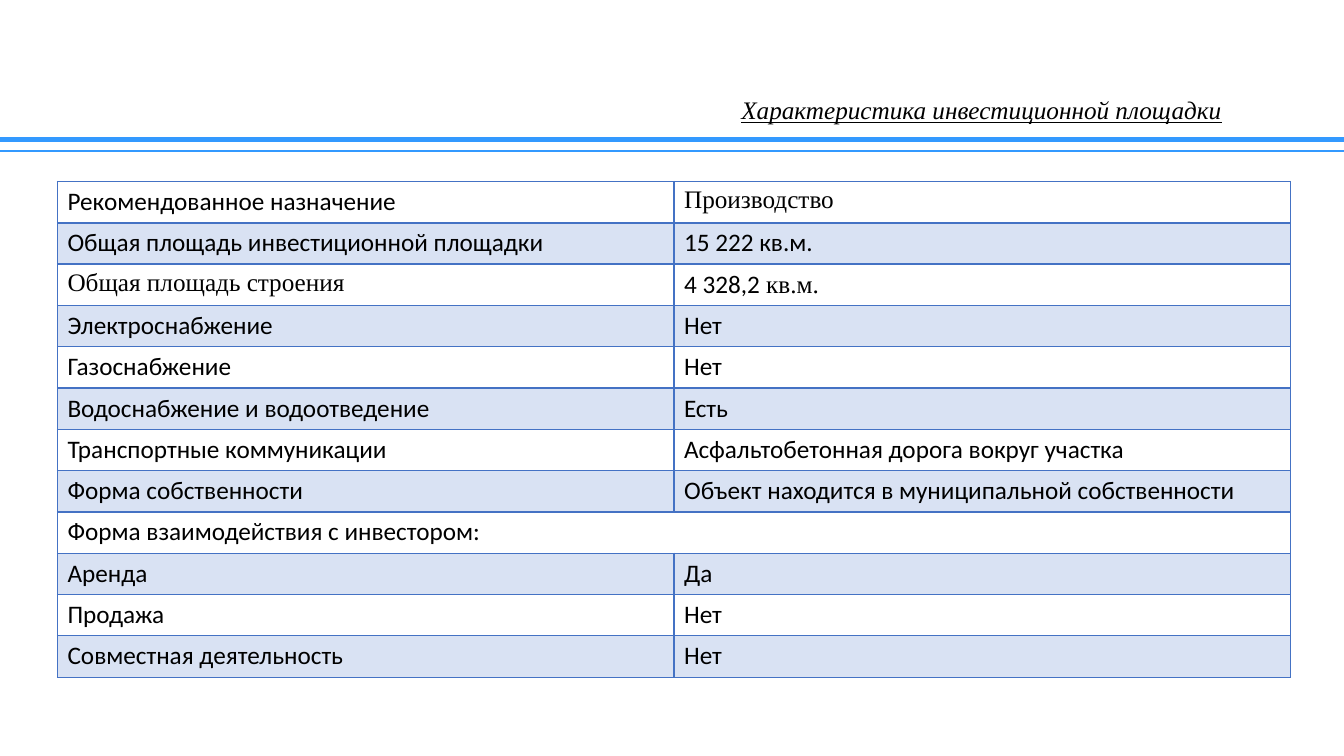
"""Build the slide with the characteristics of an investment site."""
from lxml import etree
from pptx import Presentation
from pptx.dml.color import RGBColor
from pptx.enum.shapes import MSO_CONNECTOR
from pptx.enum.text import MSO_ANCHOR, MSO_AUTO_SIZE, PP_ALIGN
from pptx.oxml.ns import qn
from pptx.util import Inches, Pt

STRAIGHT = MSO_CONNECTOR.STRAIGHT
MIDDLE = MSO_ANCHOR.MIDDLE
NO_AUTOFIT = MSO_AUTO_SIZE.NONE
CENTER = PP_ALIGN.CENTER

SANS, SERIF = "Calibri", "Times New Roman"
BLACK, RULE_BLUE, TABLE_BLUE = "000000", "3399FF", "4472C4"
SLIDE_WIDTH = 13.33
ROW_HEIGHT = 0.41
COLUMN_WIDTH = 6.115


def add_run(paragraph, text, font_name):
    run = paragraph.add_run()
    run.text = text
    run.font.name = font_name
    run.font.size = Pt(18)
    run.font.color.rgb = RGBColor.from_string(BLACK)
    return run


def add_border(cell_properties, side, points):
    border = etree.SubElement(cell_properties, qn(f"a:ln{side}"), w=str(Pt(points)))
    fill = etree.SubElement(border, qn("a:solidFill"))
    etree.SubElement(fill, qn("a:srgbClr"), val=TABLE_BLUE)


characteristics = [
    ([("Рекомендованное назначение", SANS)], [("Производство", SERIF)]),
    ([("Общая площадь инвестиционной площадки", SANS)], [("15 222 кв.м.", SANS)]),
    ([("Общая площадь строения", SERIF)], [("4 328,2", SANS), (" кв.м.", SERIF)]),
    ([("Электроснабжение", SANS)], [("Нет", SANS)]),
    ([("Газоснабжение", SANS)], [("Нет", SANS)]),
    ([("Водоснабжение и водоотведение", SANS)], [("Есть", SANS)]),
    ([("Транспортные коммуникации", SANS)],
     [("Асфальтобетонная дорога вокруг участка", SANS)]),
    ([("Форма собственности", SANS)],
     [("Объект находится в муниципальной собственности", SANS)]),
    ([("Форма взаимодействия с инвестором:", SANS)], []),
    ([("Аренда", SANS)], [("Да", SANS)]),
    ([("Продажа", SANS)], [("Нет", SANS)]),
    ([("Совместная деятельность", SANS)], [("Нет", SANS)]),
]

prs = Presentation()
prs.slide_width = Inches(SLIDE_WIDTH)
prs.slide_height = Inches(7.5)
slide = prs.slides.add_slide(prs.slide_layouts[5])

for y, points in [(1.38, 3.5), (1.5, 1.5)]:
    rule = slide.shapes.add_connector(
        STRAIGHT, Inches(0), Inches(y), Inches(SLIDE_WIDTH), Inches(y))
    rule.line.color.rgb = RGBColor.from_string(RULE_BLUE)
    rule.line.width = Pt(points)
    etree.SubElement(rule._element.spPr, qn("a:effectLst"))

title = slide.shapes.title
title.left, title.top = Inches(6.67), Inches(0.97)
title.width, title.height = Inches(6.13), Inches(0.27)
title.text_frame.auto_size = NO_AUTOFIT
title.text_frame.vertical_anchor = MIDDLE
heading = title.text_frame.paragraphs[0]
heading.alignment = CENTER
heading.line_spacing = 0.9
heading_run = add_run(heading, "Характеристика инвестиционной площадки", SERIF)
heading_run.font.italic = True
heading_run.font.underline = True

table = slide.shapes.add_table(
    len(characteristics), 2, Inches(0.57), Inches(1.8),
    Inches(2 * COLUMN_WIDTH), Inches(ROW_HEIGHT * len(characteristics))).table
table.first_row = False
table.horz_banding = False

for row_index, row_texts in enumerate(characteristics):
    table.rows[row_index].height = Inches(ROW_HEIGHT)
    for column_index, texts in enumerate(row_texts):
        cell = table.cell(row_index, column_index)
        for text, font_name in texts:
            add_run(cell.text_frame.paragraphs[0], text, font_name)
        cell_properties = cell._tc.get_or_add_tcPr()
        for side in "LRTB":
            add_border(cell_properties, side, 2 if row_index == 0 and side == "B" else 1)
        if row_index % 2:
            cell.fill.solid()
            cell.fill.fore_color.rgb = RGBColor.from_string(TABLE_BLUE)
            band_color = cell_properties.find(qn("a:solidFill"))[0]
            etree.SubElement(band_color, qn("a:alpha"), val="20000")
        else:
            cell.fill.background()
    if not row_texts[1]:
        table.cell(row_index, 0).merge(table.cell(row_index, 1))

prs.save("out.pptx")
